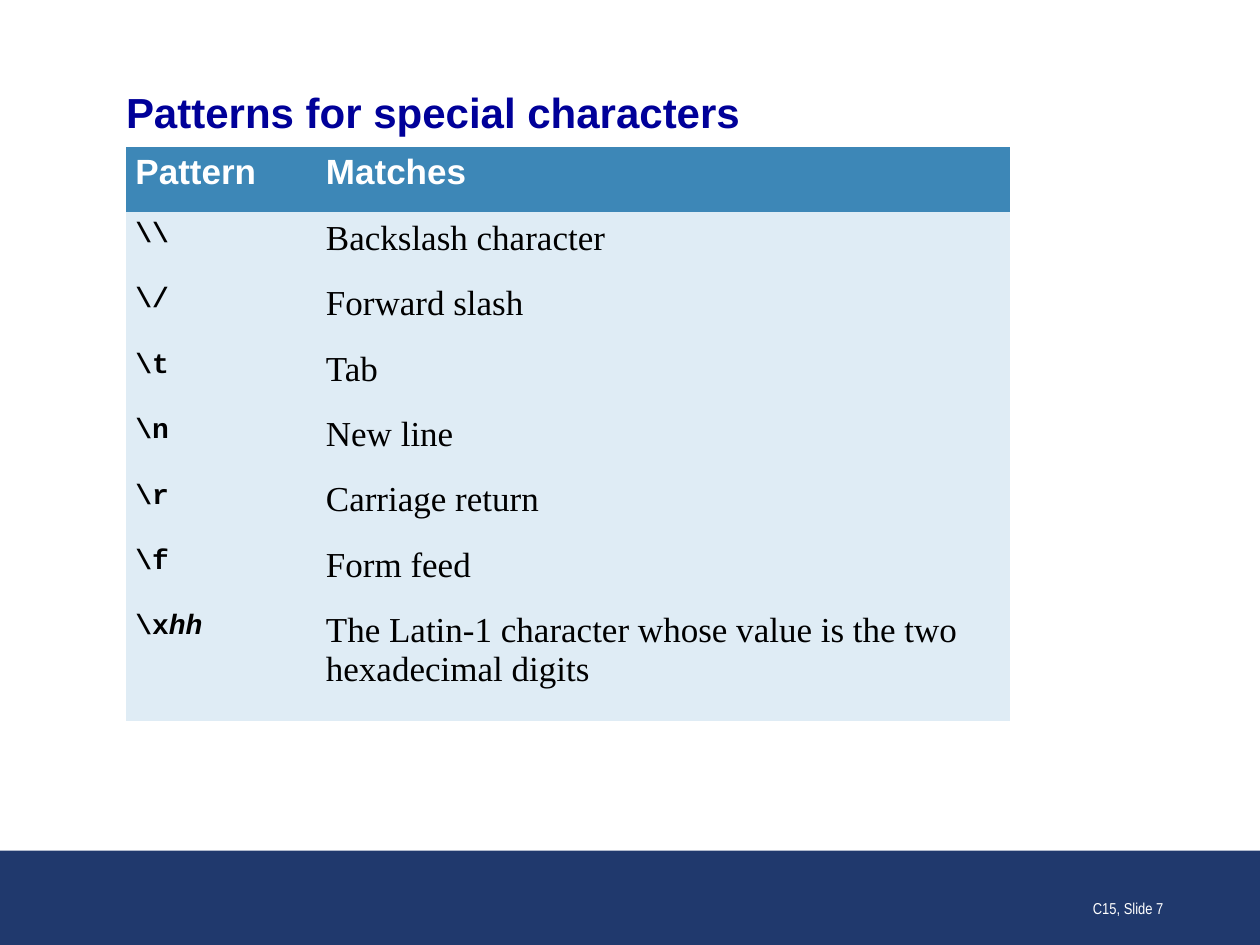
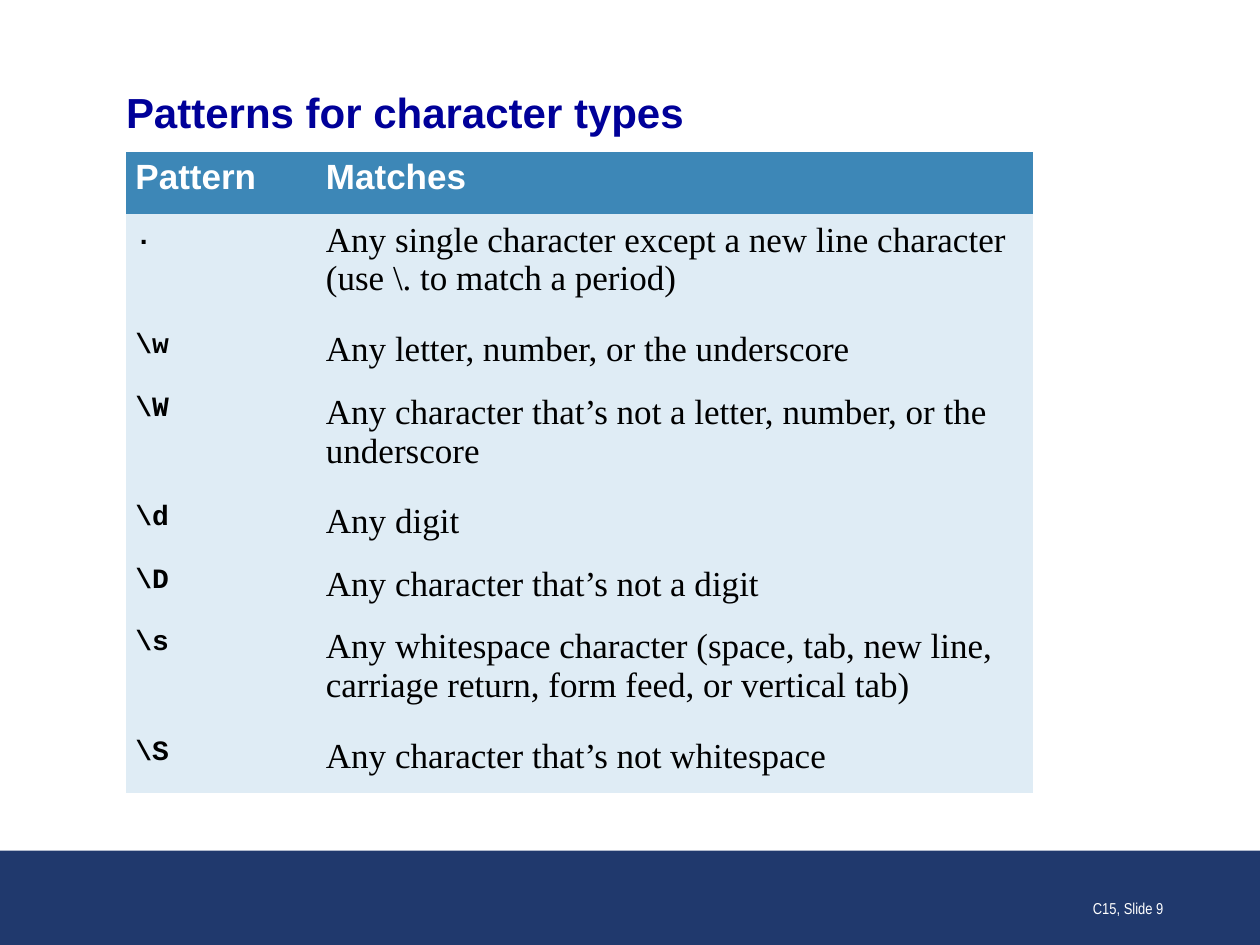
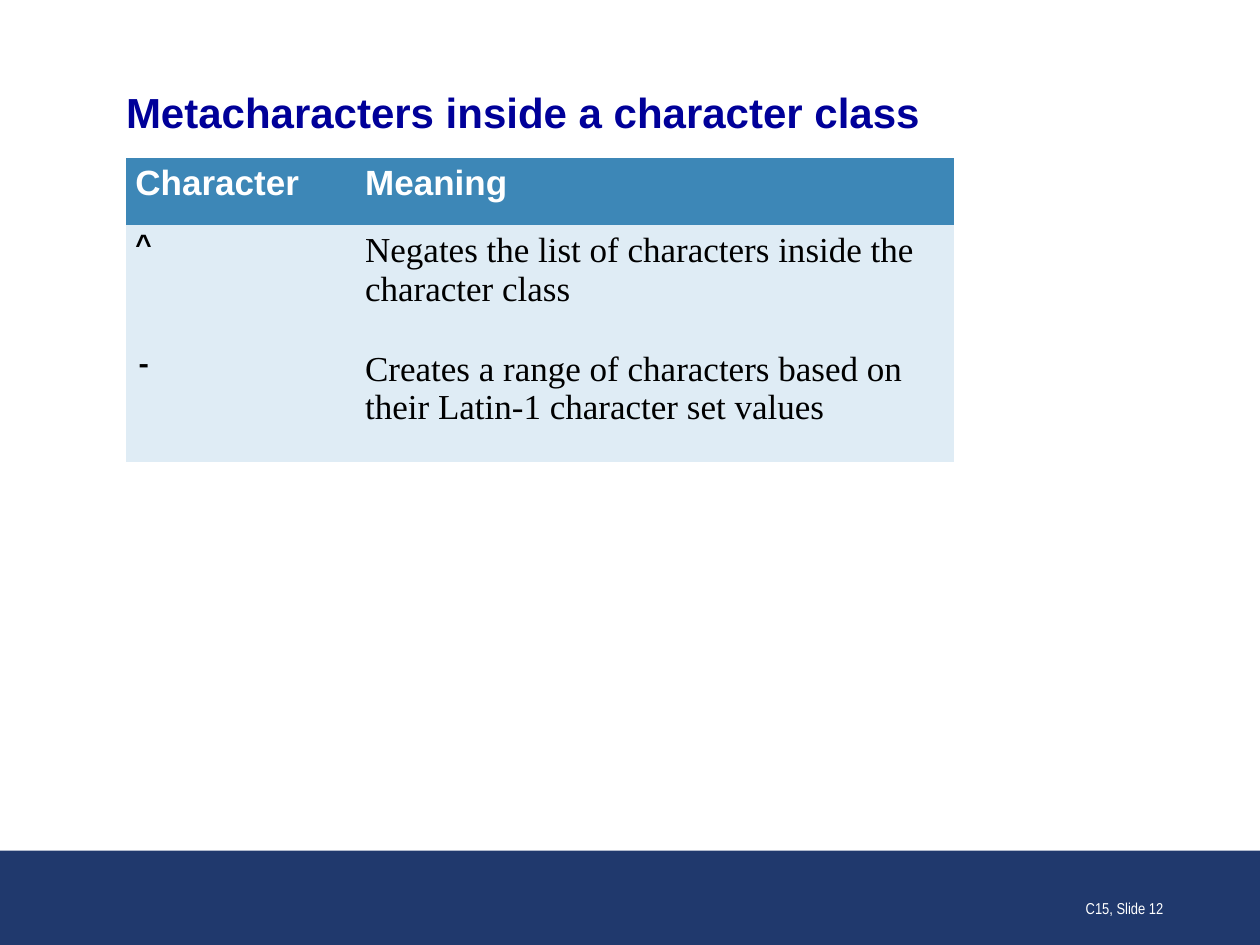
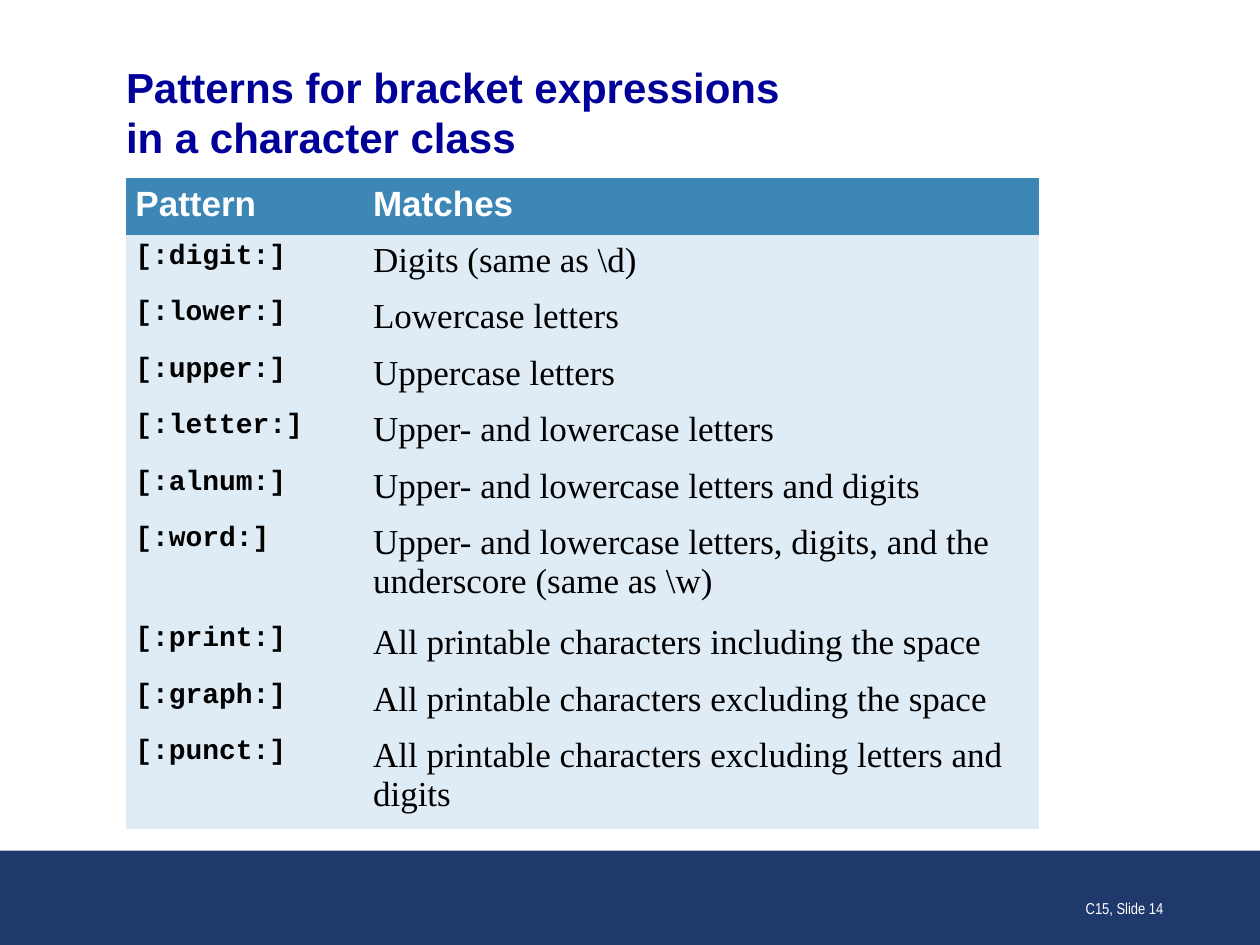
from dataclasses import dataclass

from pptx import Presentation
from pptx.dml.color import RGBColor
from pptx.enum.shapes import MSO_SHAPE
from pptx.enum.text import MSO_ANCHOR, MSO_AUTO_SIZE, PP_ALIGN
from pptx.oxml.ns import qn
from pptx.presentation import Presentation as Deck
from pptx.slide import Slide
from pptx.text.text import TextFrame
from pptx.util import Cm, Pt

# Shared look
COLORS = {
    "background": "FFFFFF",
    "band": "20396D",
    "title": "000099",
    "header_fill": "3D87B7",
    "body_fill": "DFECF5",
    "light_text": "FFFFFF",
    "dark_text": "000000",
}
HEADING_FONT = "Arial"
CODE_FONT = "Courier New"
BODY_FONT = "Times New Roman"
FOOTER_FONT = "Arial Narrow"

SLIDE_WIDTH, SLIDE_HEIGHT = 25.4, 19.05
BAND_HEIGHT = 1.9
LEFT_MARGIN = 2.54
TITLE_CENTER, TITLE_WIDTH, TITLE_LINE = 2.25, 20.32, 1.03
TITLE_SIZE = 24
TITLE_ONLY_LAYOUT = 5
NO_TABLE_STYLE = "{2D5ABB26-0587-4C30-8999-92F81FD0307C}"


@dataclass(frozen=True)
class Entry:
    code: str
    meaning: str
    variable: str = ""  # italic ending of the code
    tall: bool = False  # the meaning needs two lines


@dataclass(frozen=True)
class PatternSlide:
    number: int
    title: tuple[str, ...]
    headings: tuple[str, str]
    top: float
    columns: tuple[float, float]
    row_height: float
    tall_row_height: float
    entries: tuple[Entry, ...]


# Content
SLIDES = (
    PatternSlide(
        7, ("Patterns for special characters",), ("Pattern", "Matches"),
        2.96, (3.84, 13.98), 1.32, 2.33,
        (
            Entry(r"\\", "Backslash character"),
            Entry(r"\/", "Forward slash"),
            Entry(r"\t", "Tab"),
            Entry(r"\n", "New line"),
            Entry(r"\r", "Carriage return"),
            Entry(r"\f", "Form feed"),
            Entry(r"\x", "The Latin-1 character whose value is the two hexadecimal digits",
                  variable="hh", tall=True),
        ),
    ),
    PatternSlide(
        9, ("Patterns for character types",), ("Pattern", "Matches"),
        3.06, (3.84, 14.45), 1.26, 2.21,
        (
            Entry(".", r"Any single character except a new line character (use \. to match a period)",
                  tall=True),
            Entry(r"\w", "Any letter, number, or the underscore"),
            Entry(r"\W", "Any character that’s not a letter, number, or the underscore", tall=True),
            Entry(r"\d", "Any digit"),
            Entry(r"\D", "Any character that’s not a digit"),
            Entry(r"\s", "Any whitespace character (space, tab, new line, carriage return, "
                  "form feed, or vertical tab)", tall=True),
            Entry(r"\S", "Any character that’s not whitespace"),
        ),
    ),
    PatternSlide(
        12, ("Metacharacters inside a character class",), ("Character", "Meaning"),
        3.18, (4.63, 12.07), 1.35, 2.39,
        (
            Entry("^", "Negates the list of characters inside the character class", tall=True),
            Entry("-", "Creates a range of characters based on their Latin-1 character set values",
                  tall=True),
        ),
    ),
    PatternSlide(
        14, ("Patterns for bracket expressions", "in a character class"), ("Pattern", "Matches"),
        3.59, (4.79, 13.61), 1.14, 2.01,
        (
            Entry("[:digit:]", r"Digits (same as \d)"),
            Entry("[:lower:]", "Lowercase letters"),
            Entry("[:upper:]", "Uppercase letters"),
            Entry("[:letter:]", "Upper- and lowercase letters"),
            Entry("[:alnum:]", "Upper- and lowercase letters and digits"),
            Entry("[:word:]", r"Upper- and lowercase letters, digits, and the underscore (same as \w)",
                  tall=True),
            Entry("[:print:]", "All printable characters including the space"),
            Entry("[:graph:]", "All printable characters excluding the space"),
            Entry("[:punct:]", "All printable characters excluding letters and digits", tall=True),
        ),
    ),
)


# Drawing
def rgb(name: str) -> RGBColor:
    return RGBColor.from_string(COLORS[name])


def write_text(frame: TextFrame, *lines: str, font: str, size: float, color: str,
               bold: bool = False, align: PP_ALIGN = PP_ALIGN.LEFT, italic_end: str = "") -> None:
    """Write lines into the first paragraph, with an optional italic ending."""
    paragraph = frame.paragraphs[0]
    paragraph.alignment = align
    for index, line in enumerate(lines):
        if index:
            paragraph.add_line_break()
        paragraph.add_run().text = line
    if italic_end:
        ending = paragraph.add_run()
        ending.text = italic_end
        ending.font.italic = True
    for run in paragraph.runs:
        run.font.name = font
        run.font.size = Pt(size)
        run.font.bold = bold
        run.font.color.rgb = rgb(color)


def format_master(presentation: Deck) -> None:
    """Set the background and the title size, which line breaks inherit."""
    master = presentation.slide_master
    master.background.fill.solid()
    master.background.fill.fore_color.rgb = rgb("background")
    for title_style in master.element.iter(qn("p:titleStyle")):
        for properties in title_style.iter(qn("a:defRPr")):
            properties.set("sz", str(TITLE_SIZE * 100))


def add_master_band(presentation: Deck, slide: Slide) -> None:
    """Draw the bottom band and move it to the slide master."""
    band = slide.shapes.add_shape(
        MSO_SHAPE.RECTANGLE, Cm(0), Cm(SLIDE_HEIGHT - BAND_HEIGHT), Cm(SLIDE_WIDTH), Cm(BAND_HEIGHT))
    band.shadow.inherit = False
    band.fill.solid()
    band.fill.fore_color.rgb = rgb("band")
    band.line.fill.background()
    presentation.slide_master.shapes.element.insert(2, band.element)


def set_title(slide: Slide, lines: tuple[str, ...]) -> None:
    title = slide.shapes.title
    height = TITLE_LINE * len(lines)
    title.left, title.top = Cm(LEFT_MARGIN), Cm(TITLE_CENTER - height / 2)
    title.width, title.height = Cm(TITLE_WIDTH), Cm(height)
    frame = title.text_frame
    frame.margin_left = frame.margin_right = frame.margin_top = frame.margin_bottom = Cm(0)
    frame.vertical_anchor = MSO_ANCHOR.MIDDLE
    frame.word_wrap = True
    frame.auto_size = MSO_AUTO_SIZE.SHAPE_TO_FIT_TEXT
    write_text(frame, *lines, font=HEADING_FONT, size=TITLE_SIZE, color="title", bold=True)


def add_pattern_table(slide: Slide, content: PatternSlide) -> None:
    heights = [content.row_height] + [
        content.tall_row_height if entry.tall else content.row_height for entry in content.entries]
    graphic_frame = slide.shapes.add_table(
        len(heights), len(content.columns), Cm(LEFT_MARGIN), Cm(content.top),
        Cm(sum(content.columns)), Cm(sum(heights)))
    for style in graphic_frame.element.iter(qn("a:tableStyleId")):
        style.text = NO_TABLE_STYLE
    table = graphic_frame.table
    for column, width in zip(table.columns, content.columns):
        column.width = Cm(width)
    for row, height in zip(table.rows, heights):
        row.height = Cm(height)

    for index, row in enumerate(table.rows):
        for cell in row.cells:
            cell.fill.solid()
            cell.fill.fore_color.rgb = rgb("body_fill" if index else "header_fill")
            cell.margin_left = cell.margin_right = Cm(0.19)
            cell.margin_top = cell.margin_bottom = Cm(0.13)

    for column_index, heading in enumerate(content.headings):
        write_text(table.cell(0, column_index).text_frame, heading,
                   font=HEADING_FONT, size=20, color="light_text", bold=True)
    for row_index, entry in enumerate(content.entries, start=1):
        write_text(table.cell(row_index, 0).text_frame, entry.code, font=CODE_FONT, size=16,
                   color="dark_text", bold=True, italic_end=entry.variable)
        write_text(table.cell(row_index, 1).text_frame, entry.meaning,
                   font=BODY_FONT, size=20, color="dark_text")


def add_footer(slide: Slide, number: int) -> None:
    footer = slide.shapes.add_textbox(Cm(18.42), Cm(17.35), Cm(5.28), Cm(1.27))
    frame = footer.text_frame
    frame.word_wrap = True
    frame.vertical_anchor = MSO_ANCHOR.BOTTOM
    write_text(frame, f"C15, Slide {number}", font=FOOTER_FONT, size=9,
               color="light_text", align=PP_ALIGN.RIGHT)


def main() -> None:
    presentation = Presentation()
    presentation.slide_width, presentation.slide_height = Cm(SLIDE_WIDTH), Cm(SLIDE_HEIGHT)
    format_master(presentation)

    for index, content in enumerate(SLIDES):
        slide = presentation.slides.add_slide(presentation.slide_layouts[TITLE_ONLY_LAYOUT])
        if index == 0:
            add_master_band(presentation, slide)
        set_title(slide, content.title)
        add_pattern_table(slide, content)
        add_footer(slide, content.number)

    presentation.save("out.pptx")


if __name__ == "__main__":
    main()
